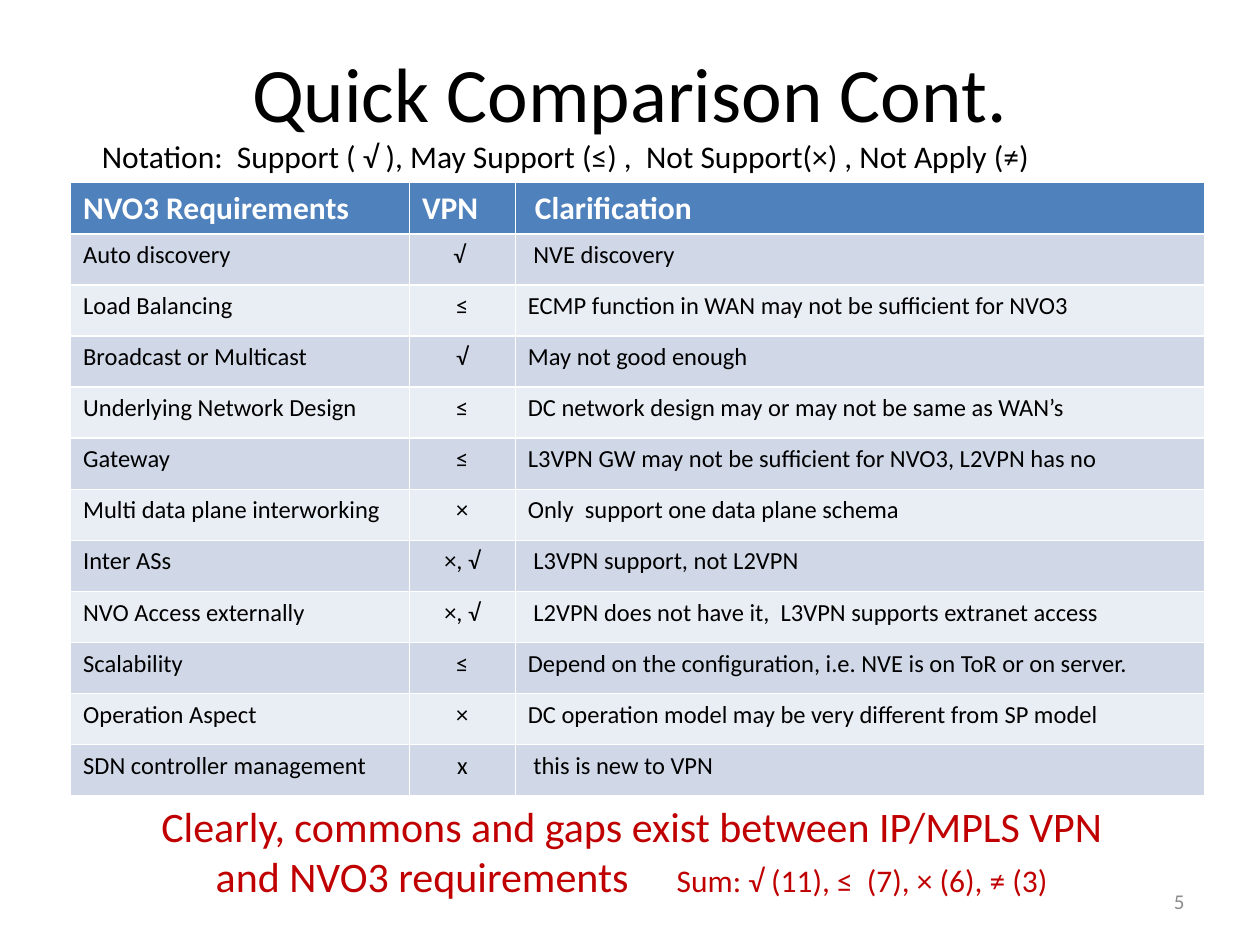
from dataclasses import dataclass

from pptx import Presentation
from pptx.dml.color import RGBColor
from pptx.enum.text import MSO_ANCHOR, PP_ALIGN
from pptx.util import Inches, Pt

LEFT, CENTER, RIGHT = PP_ALIGN.LEFT, PP_ALIGN.CENTER, PP_ALIGN.RIGHT
TOP, MIDDLE = MSO_ANCHOR.TOP, MSO_ANCHOR.MIDDLE
TITLE_ONLY = 5


@dataclass(frozen=True)
class Theme:
    font: str = "Calibri"
    text: str = "000000"
    header_text: str = "FFFFFF"
    header_fill: str = "4F81BD"
    bands: tuple = ("D0D8E8", "E9EDF4")
    accent: str = "C00000"
    muted: str = "8C8C8C"
    title_size: int = 44
    message_size: int = 24
    label_size: int = 18
    cell_size: int = 14
    number_size: int = 12


THEME = Theme()

HEADER = ("NVO3 Requirements", "VPN", " Clarification")
ROWS = (
    ("Auto discovery", "√ ", " NVE discovery"),
    ("Load Balancing", "≤", "ECMP function in WAN may not be sufficient for NVO3"),
    ("Broadcast or Multicast", "√", "May not good enough"),
    ("Underlying Network Design", "≤", "DC network design may or may not be same as WAN’s"),
    ("Gateway", "≤", "L3VPN GW may not be sufficient for NVO3, L2VPN has no"),
    ("Multi data plane interworking", "×", "Only  support one data plane schema"),
    ("Inter ASs", "×, √", " L3VPN support, not L2VPN"),
    ("NVO Access externally", "×, √", " L2VPN does not have it,  L3VPN supports extranet access"),
    ("Scalability", "≤", "Depend on the configuration, i.e. NVE is on ToR or on server."),
    ("Operation Aspect", "×", "DC operation model may be very different from SP model"),
    ("SDN controller management", "x", " this is new to VPN"),
)
COLUMN_WIDTHS = (2.69, 0.84, 5.47)


def style(p, size, color, align=LEFT, bold=False):
    p.alignment = align
    p.font.name = THEME.font
    p.font.size = Pt(size)
    p.font.bold = bold
    p.font.color.rgb = RGBColor.from_string(color)


def add_title(s, box, text):
    title = s.shapes.title
    title.left, title.top, title.width, title.height = map(Inches, box)
    tf = title.text_frame
    tf.text = text
    tf.vertical_anchor = MIDDLE
    style(tf.paragraphs[0], THEME.title_size, THEME.text, CENTER)


def add_text(s, box, text, size, color, align=LEFT, anchor=TOP):
    tf = s.shapes.add_textbox(*map(Inches, box)).text_frame
    tf.word_wrap = True
    tf.vertical_anchor = anchor
    p = tf.paragraphs[0]
    p.add_run().text = text
    style(p, size, color, align)
    return p


def add_comparison(s, box):
    rows = (HEADER, *ROWS)
    table = s.shapes.add_table(len(rows), len(HEADER), *map(Inches, box)).table
    for column, width in zip(table.columns, COLUMN_WIDTHS):
        column.width = Inches(width)
    for i, values in enumerate(rows):
        is_header = i == 0
        fill = THEME.header_fill if is_header else THEME.bands[(i - 1) % 2]
        color = THEME.header_text if is_header else THEME.text
        size = THEME.label_size if is_header else THEME.cell_size
        for j, value in enumerate(values):
            cell = table.cell(i, j)
            cell.text = value
            cell.fill.solid()
            cell.fill.fore_color.rgb = RGBColor.from_string(fill)
            align = CENTER if j == 1 and not is_header else LEFT
            style(cell.text_frame.paragraphs[0], size, color, align, is_header)


def add_conclusion(s, box):
    p = add_text(s, box, "Clearly, commons and gaps exist between IP/MPLS VPN and NVO3 requirements",
                 THEME.message_size, THEME.accent, CENTER)
    # One widened space separates the message from the totals
    gap = p.add_run()
    gap.text = " "
    gap.font._element.set("spc", "2200")
    r = p.add_run()
    r.text = "Sum: √ (11), ≤  (7), × (6), ≠ (3)"
    r.font.size = Pt(THEME.label_size)


def main():
    prs = Presentation()
    prs.slide_width, prs.slide_height = Inches(10), Inches(7.5)
    s = prs.slides.add_slide(prs.slide_layouts[TITLE_ONLY])

    # Heading and table
    add_title(s, (0.5, 0.3, 9, 0.86), "Quick Comparison Cont.")
    add_comparison(s, (0.56, 1.45, 9, 4.87))

    # Slide number
    add_text(s, (7.17, 6.95, 2.33, 0.4), "5", THEME.number_size, THEME.muted, RIGHT, MIDDLE)

    # Legend above the table, conclusion below it
    add_text(s, (0.71, 1.04, 8.21, 0.4),
             "Notation:  Support ( √ ), May Support (≤) ,  Not Support(×) , Not Apply (≠)",
             THEME.label_size, THEME.text)
    add_conclusion(s, (0.91, 6.3, 8.21, 0.91))

    prs.save("out.pptx")


if __name__ == "__main__":
    main()
